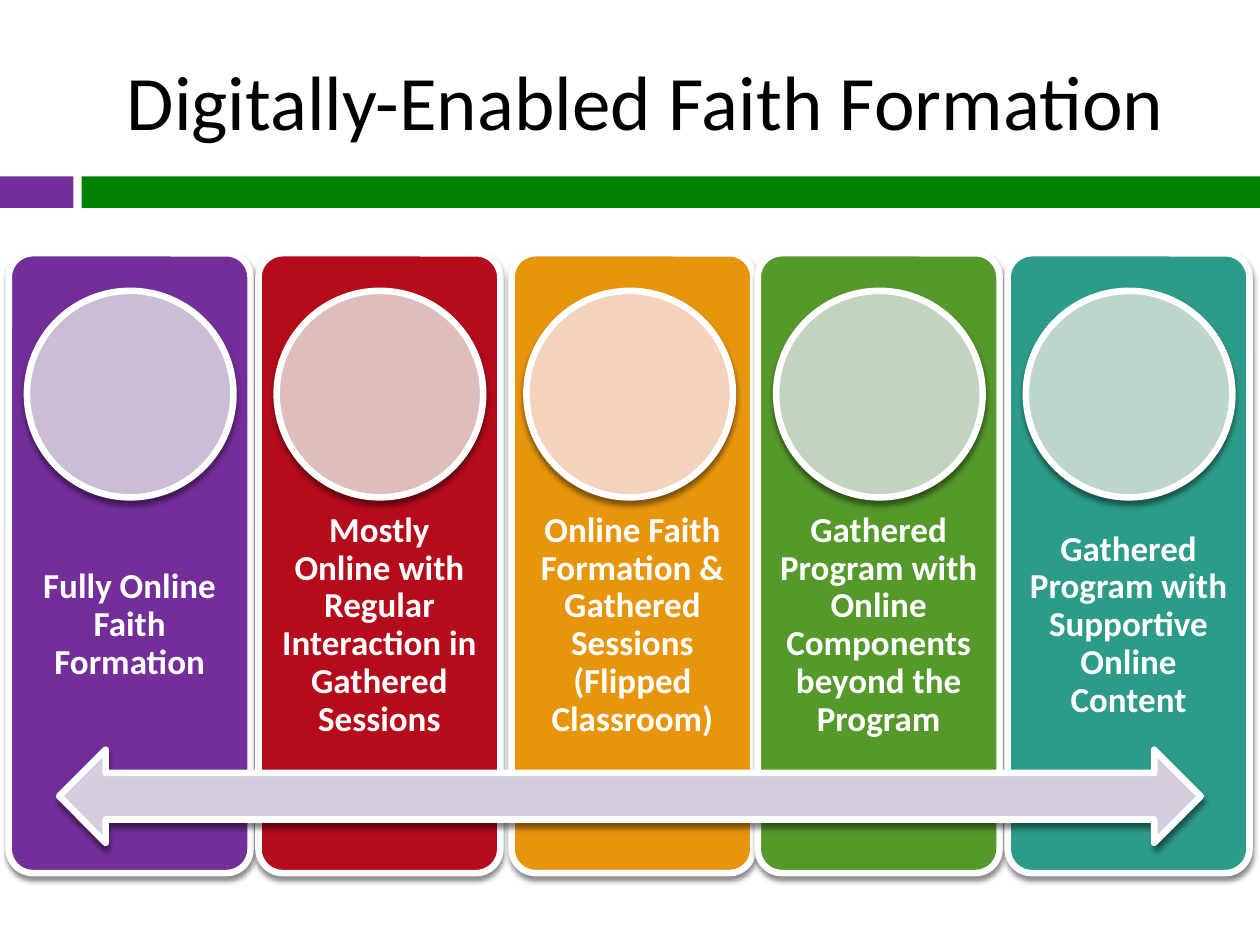
import pptx
import pptx.util
import pptx.dml.color
import pptx.enum.shapes
import pptx.enum.text
import pptx.oxml
import pptx.oxml.ns

Pt = pptx.util.Pt
RGBColor = pptx.dml.color.RGBColor
SHAPE = pptx.enum.shapes.MSO_SHAPE
MIDDLE = pptx.enum.text.MSO_ANCHOR.MIDDLE
CENTER = pptx.enum.text.PP_ALIGN.CENTER

BLACK = RGBColor(0x00, 0x00, 0x00)
WHITE = RGBColor(0xFF, 0xFF, 0xFF)
PURPLE = RGBColor(0x73, 0x2E, 0x9A)
GREEN = RGBColor(0x00, 0x80, 0x00)
RED = RGBColor(0xB5, 0x0B, 0x1B)
ORANGE = RGBColor(0xE8, 0x95, 0x0E)
LEAF = RGBColor(0x55, 0x99, 0x2B)
TEAL = RGBColor(0x2C, 0x9C, 0x89)
PALE_PURPLE = RGBColor(0xC9, 0xBE, 0xD4)
PALE_RED = RGBColor(0xDE, 0xBD, 0xBD)
PALE_ORANGE = RGBColor(0xF4, 0xD3, 0xBD)
PALE_LEAF = RGBColor(0xC3, 0xD4, 0xBE)
PALE_TEAL = RGBColor(0xBE, 0xD5, 0xCF)
LAVENDER = RGBColor(0xD5, 0xCD, 0xDE)

SHADOW = (
    f'<a:outerShdw {pptx.oxml.ns.nsdecls("a")} blurRad="{Pt(3)}" dist="{Pt(2.4)}" '
    'dir="5400000" rotWithShape="0"><a:srgbClr val="000000">'
    '<a:alpha val="45000"/></a:srgbClr></a:outerShdw>'
)

CARD_TOP, CARD_WIDTH, CARD_HEIGHT = 144.7, 138.2, 354.2
CIRCLE_LEFT, CIRCLE_STEP, CIRCLE_SIZE = 15.4, 142.7, 118

# Left edge, card colour, circle colour, label
STAGES = [
    (5, PURPLE, PALE_PURPLE, "Fully Online Faith Formation"),
    (147.7, RED, PALE_RED, "Mostly Online with Regular Interaction in Gathered Sessions"),
    (292.3, ORANGE, PALE_ORANGE,
     "Online Faith Formation & Gathered Sessions (Flipped Classroom)"),
    (433, LEAF, PALE_LEAF, "Gathered Program with Online Components beyond the Program"),
    (575.8, TEAL, PALE_TEAL, "Gathered Program with Supportive Online Content"),
]

prs = pptx.Presentation()
prs.slide_width, prs.slide_height = Pt(720), Pt(540)
slide = prs.slides.add_slide(prs.slide_layouts[5])


def add_filled(kind, left, top, width, height, color):
    shape = slide.shapes.add_shape(kind, Pt(left), Pt(top), Pt(width), Pt(height))
    shape.fill.solid()
    shape.fill.fore_color.rgb = color
    shape.line.fill.background()
    shape.shadow.inherit = False
    return shape


def add_raised(kind, left, top, width, height, color):
    """Add a filled shape with a white outline and a soft shadow below."""
    shape = add_filled(kind, left, top, width, height, color)
    shape.line.color.rgb = WHITE
    shape.line.width = Pt(3.75)
    effects = shape._element.spPr.find(pptx.oxml.ns.qn("a:effectLst"))
    effects.append(pptx.oxml.parse_xml(SHADOW))
    return shape


# Title and the band below it
title = slide.shapes.title
title.left, title.top, title.width, title.height = Pt(48), Pt(18), Pt(642), Pt(78)
title.text_frame.text = "Digitally-Enabled Faith Formation"
title.text_frame.vertical_anchor = MIDDLE
heading = title.text_frame.paragraphs[0]
heading.alignment = CENTER
heading.font.name = "Calibri"
heading.font.size = Pt(44)
heading.font.color.rgb = BLACK

add_filled(SHAPE.RECTANGLE, 0, 100.8, 42, 18, PURPLE)
add_filled(SHAPE.RECTANGLE, 46.6, 100.8, 673.4, 18, GREEN)

# One card per stage, from fully online to gathered
for index, (left, color, pale, wording) in enumerate(STAGES):
    card = add_raised(SHAPE.ROUNDED_RECTANGLE, left, CARD_TOP, CARD_WIDTH, CARD_HEIGHT, color)
    card.adjustments[0] = 0.1

    label = slide.shapes.add_textbox(Pt(left), Pt(286.5), Pt(CARD_WIDTH), Pt(141.8))
    frame = label.text_frame
    frame.word_wrap = True
    frame.vertical_anchor = MIDDLE
    frame.margin_left = frame.margin_right = Pt(11.4)
    frame.margin_top = frame.margin_bottom = Pt(11.4)
    frame.text = wording
    paragraph = frame.paragraphs[0]
    paragraph.alignment = CENTER
    paragraph.line_spacing = 0.9
    paragraph.font.name = "Calibri"
    paragraph.font.size = Pt(20)
    paragraph.font.bold = True
    paragraph.font.color.rgb = WHITE

    add_raised(SHAPE.OVAL, CIRCLE_LEFT + index * CIRCLE_STEP, 166.2,
               CIRCLE_SIZE, CIRCLE_SIZE, pale)

# Continuum arrow across all stages
add_raised(SHAPE.LEFT_RIGHT_ARROW, 33.8, 428.4, 652.4, 53.2, LAVENDER)

prs.save("out.pptx")
